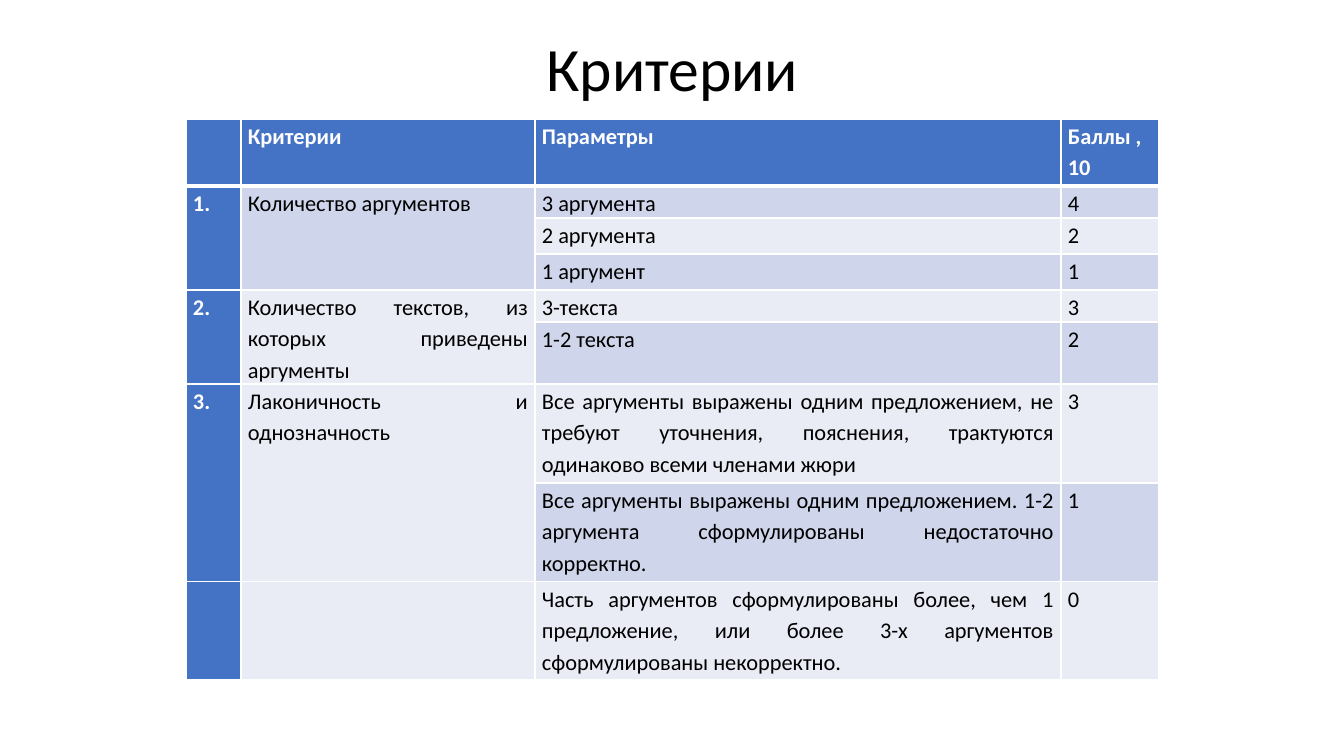
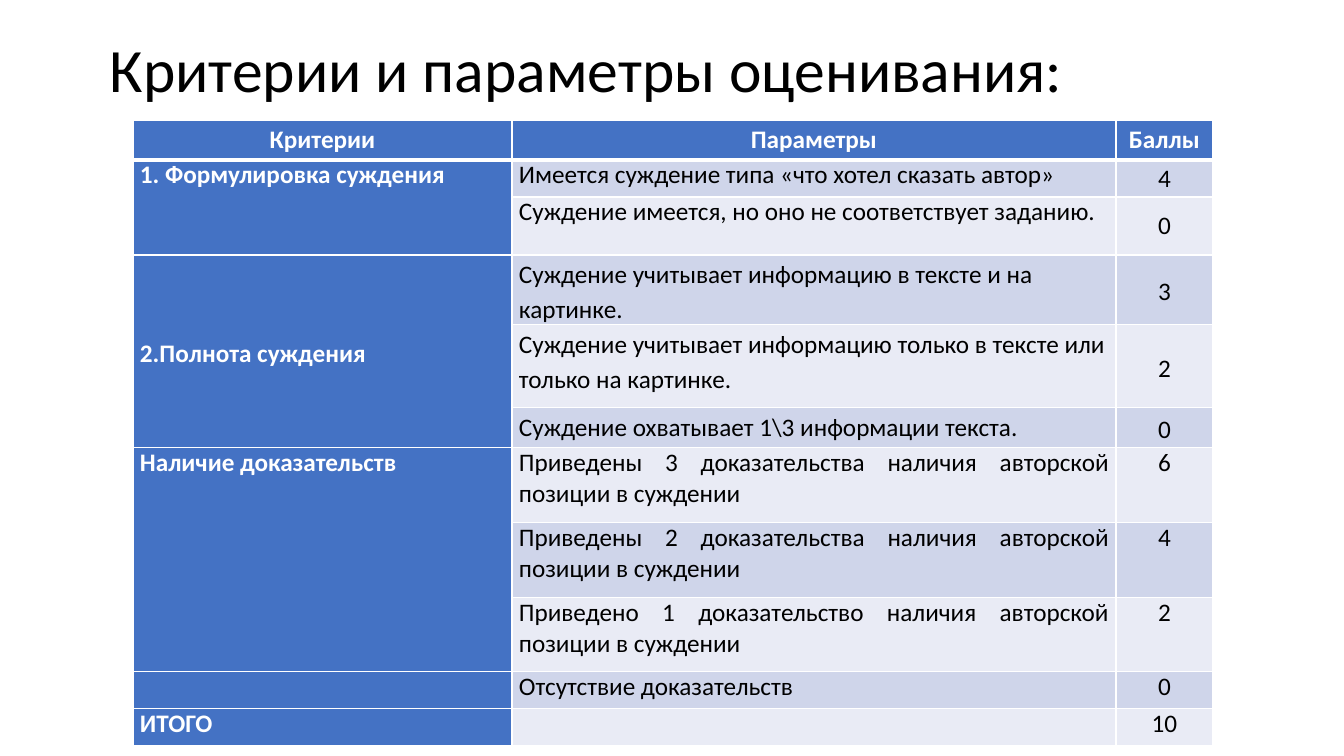
from dataclasses import dataclass

from lxml.etree import SubElement
from pptx import Presentation
from pptx.dml.color import RGBColor
from pptx.enum.text import MSO_ANCHOR, PP_ALIGN
from pptx.oxml.ns import qn
from pptx.util import Emu, Pt


@dataclass(frozen=True)
class Theme:
    font: str = "Calibri"
    black: str = "000000"
    white: str = "FFFFFF"
    blue: str = "4472C4"
    bands: tuple = ("E9EBF5", "CFD5EA")
    title: int = 44
    small: int = 16
    large: int = 18
    thin: int = 1
    thick: int = 3


LOOK = Theme()
LEFT, MID, JUST = PP_ALIGN.LEFT, PP_ALIGN.CENTER, PP_ALIGN.JUSTIFY
TOP, HALF = MSO_ANCHOR.TOP, MSO_ANCHOR.MIDDLE
SCALE = 914400 / 100.8
WIDE = 1.15


def px(num):
    return Emu(round(num * SCALE))


def put(item, **vals):
    for name, val in vals.items():
        setattr(item, name, val)


def write(frame, text, size, tone, bold, align, space):
    frame.text = text
    for para in frame.paragraphs:
        put(para, alignment=align, line_spacing=space)
        for run in para.runs:
            put(run.font, name=LOOK.font, size=Pt(size), bold=bold)
            run.font.color.rgb = RGBColor.from_string(tone)


# Title: text centred by height in its box
def add_title(slide, box, text, align):
    frame = slide.shapes.add_textbox(*map(px, box)).text_frame
    put(frame, word_wrap=True, vertical_anchor=HALF)
    write(frame, text, LOOK.title, LOOK.black, False, align, 0.9)


# Cell borders: a heavy rule parts the head from the body
def add_rules(cell, row):
    props = cell._tc.get_or_add_tcPr()
    heavy = {0: "lnB", 1: "lnT"}.get(row)
    for side in ("lnL", "lnR", "lnT", "lnB"):
        width = LOOK.thick if side == heavy else LOOK.thin
        line = SubElement(props, qn("a:" + side), w=str(Pt(width)))
        fill = SubElement(line, qn("a:solidFill"))
        SubElement(fill, qn("a:srgbClr"), val=LOOK.white)


# Table: None in a row extends the cell above it
def add_grid(slide, spot, cols, highs, rows, size, style):
    box = (*spot, sum(cols), sum(highs))
    grid = slide.shapes.add_table(len(rows), len(cols), *map(px, box)).table
    for part, width in zip(grid.columns, cols):
        part.width = px(width)
    for part, high in zip(grid.rows, highs):
        part.height = px(high)
    for r, row in enumerate(rows):
        for c, text in enumerate(row):
            cell = grid.cell(r, c)
            dark = r == 0 or c == 0
            align, space, anchor = style(r, c)
            put(cell, margin_left=px(7), margin_right=px(7), margin_top=0,
                margin_bottom=0, vertical_anchor=anchor)
            add_rules(cell, r)
            cell.fill.solid()
            tone = LOOK.blue if dark else LOOK.bands[r % 2]
            cell.fill.fore_color.rgb = RGBColor.from_string(tone)
            if text:
                ink = LOOK.white if dark else LOOK.black
                write(cell.text_frame, text, size, ink, dark, align, space)
    # Join each cell with the open cells below it
    for c in range(len(cols)):
        start = 0
        for r in range(1, len(rows) + 1):
            if r == len(rows) or rows[r][c] is not None:
                if r - start > 1:
                    grid.cell(start, c).merge(grid.cell(r - 1, c))
                start = r


def first_style(r, c):
    return JUST, WIDE, TOP


def last_style(r, c):
    loose = 3 <= r <= 5
    space = WIDE if r == 0 or loose else 1.0
    if r == 0 or c == 2:
        align = MID
    else:
        align = LEFT if c == 1 and loose else JUST
    half = (c == 2 and 1 <= r <= 5) or (c == 0 and r == 3)
    return align, space, HALF if half else TOP


FIRST = [
    ("", "Критерии", "Параметры", "Баллы ,\n10"),
    ("1.", "Количество аргументов", "3 аргумента", "4"),
    (None, None, "2 аргумента", "2"),
    (None, None, "1 аргумент", "1"),
    ("2.", "Количество текстов, из которых приведены аргументы",
     "3-текста", "3"),
    (None, None, "1-2 текста", "2"),
    ("3.", "Лаконичность и однозначность",
     "Все аргументы выражены одним предложением, не требуют уточнения, "
     "пояснения, трактуются одинаково всеми членами жюри", "3"),
    (None, None, "Все аргументы выражены одним предложением. 1-2 аргумента "
     "сформулированы недостаточно корректно.", "1"),
    ("", "", "Часть аргументов сформулированы более, чем 1 предложение, "
     "или более 3-х аргументов сформулированы некорректно.", "0"),
]
PROOF = "доказательства наличия авторской позиции в суждении"
LAST = [
    ("Критерии", "Параметры", "Баллы"),
    ("1. Формулировка суждения",
     "Имеется суждение типа «что хотел сказать автор»", "4"),
    (None, "Суждение имеется, но оно не соответствует заданию.", "0"),
    ("2.Полнота суждения",
     "Суждение учитывает информацию в тексте и на картинке.", "3"),
    (None, "Суждение учитывает информацию только в тексте или "
     "только на картинке.", "2"),
    (None, "Суждение охватывает 1\\3 информации текста.", "0"),
    ("Наличие доказательств", "Приведены 3 " + PROOF, "6"),
    (None, "Приведены 2 " + PROOF, "4"),
    (None, "Приведено 1 доказательство наличия авторской позиции "
     "в суждении", "2"),
    ("", "Отсутствие доказательств", "0"),
    ("ИТОГО", "", "10"),
]


def main():
    deck = Presentation()
    put(deck, slide_width=px(1344), slide_height=px(756))
    blank = deck.slide_layouts[6]

    # Slide 1: criteria for arguments
    slide = deck.slides.add_slide(blank)
    add_title(slide, (93, 21, 1159, 102), "Критерии", MID)
    add_grid(slide, (186, 119), (55, 294, 526, 98),
             (67, 32, 36, 36, 32, 62, 99, 99, 98),
             FIRST, LOOK.small, first_style)

    # Slide 2: criteria for judgements
    slide = deck.slides.add_slide(blank)
    add_title(slide, (100, 0, 1159, 146),
              "Критерии и параметры оценивания:", LEFT)
    add_grid(slide, (133, 120), (379, 604, 97),
             (40, 37, 58, 70, 83, 40, 75, 75, 74, 37, 37),
             LAST, LOOK.large, last_style)
    deck.save("out.pptx")


if __name__ == "__main__":
    main()
